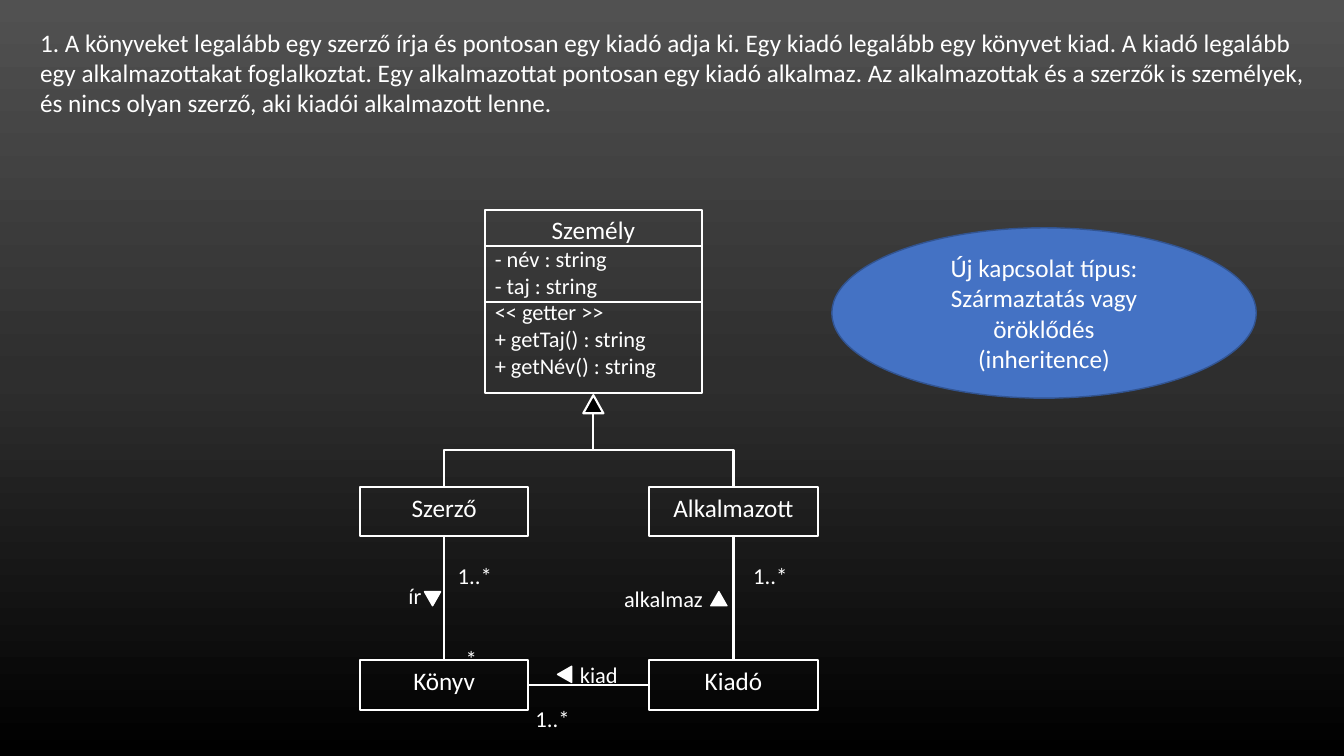
from copy import deepcopy
from dataclasses import dataclass

from pptx import Presentation
from pptx.dml.color import RGBColor
from pptx.enum.shapes import MSO_CONNECTOR as LinkKind, MSO_SHAPE as Preset
from pptx.enum.text import MSO_ANCHOR as Anchor, MSO_AUTO_SIZE as AutoSize, PP_ALIGN as Align
from pptx.oxml.ns import qn
from pptx.oxml.xmlchemy import OxmlElement
from pptx.util import Inches, Pt


@dataclass(frozen=True)
class Theme:
    font: str = "Calibri"
    ink: str = "FFFFFF"
    hollow: str = "000000"
    accent: str = "4472C4"
    accent_edge: str = "325491"
    backdrop: tuple = ((0, "515151"), (0.5, "2E2E2E"), (1, "000000"))
    body: float = 18
    detail: float = 16
    multiplicity: float = 28
    stroke: float = 1.5
    thin: float = 1


THEME = Theme()
TOP, LEFT, BOTTOM, RIGHT = range(4)


def rgb(color):
    return RGBColor.from_string(color)


def write(frame, lines, size, align=Align.CENTER, anchor=Anchor.TOP, baseline=None):
    frame.text = lines[0]
    for line in lines[1:]:
        frame.add_paragraph().text = line
    frame.vertical_anchor = anchor
    for paragraph in frame.paragraphs:
        paragraph.alignment = align
        for run in paragraph.runs:
            run.font.name = THEME.font
            run.font.size = Pt(size)
            run.font.color.rgb = rgb(THEME.ink)
            if baseline:
                run.font._element.set("baseline", str(baseline))


def add_label(slide, box, lines, size, align=Align.CENTER, wrap=True, baseline=None):
    label = slide.shapes.add_textbox(*map(Inches, box))
    write(label.text_frame, lines, size, align, baseline=baseline)
    label.text_frame.word_wrap = wrap
    label.text_frame.auto_size = AutoSize.SHAPE_TO_FIT_TEXT


def add_figure(slide, preset, box, fill=None, edge=THEME.ink, weight=THEME.stroke):
    figure = slide.shapes.add_shape(preset, *map(Inches, box))
    figure.shadow.inherit = False
    if fill:
        figure.fill.solid()
        figure.fill.fore_color.rgb = rgb(fill)
    else:
        figure.fill.background()
    figure.line.color.rgb = rgb(edge)
    figure.line.width = Pt(weight)
    return figure


def add_class(slide, box, name):
    frame = add_figure(slide, Preset.RECTANGLE, box)
    write(frame.text_frame, [name], THEME.body)
    return frame


def add_link(slide, kind, start, end):
    link = slide.shapes.add_connector(kind, *map(Inches, (*start, *end)))
    link.line.color.rgb = rgb(THEME.ink)
    link.line.width = Pt(THEME.stroke)
    link._element.spPr.append(OxmlElement("a:effectLst"))
    return link


def add_association(slide, source, source_side, target, target_side):
    link = add_link(slide, LinkKind.STRAIGHT, (0, 0), (1, 1))
    link.begin_connect(source, source_side)
    link.end_connect(target, target_side)


def add_inheritance(slide, child, parent):
    (x1, y1), (x2, y2) = child, parent
    cx, cy = (x1 + x2) / 2, (y1 + y2) / 2
    dx, dy = (x1 - x2) / 2, (y1 - y2) / 2
    link = add_link(slide, LinkKind.ELBOW, (cx + dy, cy - dx), (cx - dy, cy + dx))
    link._element.spPr.find(qn("a:xfrm")).set("rot", "5400000")


def paint_backdrop(slide):
    fill = slide.background.fill
    fill.gradient()
    fill.gradient_angle = 270
    stops = slide.element.find(".//" + qn("a:gsLst"))
    stops.insert(1, deepcopy(stops[0]))
    for stop, (position, color) in zip(fill.gradient_stops, THEME.backdrop):
        stop.position = position
        stop.color.rgb = rgb(color)


def add_person(slide, box):
    left, top, width, height = box
    add_class(slide, box, "Személy")
    add_figure(slide, Preset.RECTANGLE, (left, top + 0.36, width, 0.56))
    members = ["- név : string", "- taj : string", "<< getter >>",
               "+ getTaj() : string", "+ getNév() : string"]
    add_label(slide, (left, top + 0.3, 1.87, 1.45), members, THEME.detail, Align.LEFT, wrap=False)
    add_figure(slide, Preset.ISOSCELES_TRIANGLE,
               (left + width / 2 - 0.1, top + height + 0.02, 0.2, 0.18), THEME.hollow)
    return left + width / 2, top + height + 0.2


def add_relations(slide, box, parent):
    left, top, width, height = box
    class_w, class_h = 1.67, 0.49
    names = (("Szerző", "Alkalmazott"), ("Könyv", "Kiadó"))
    classes = {}
    for row, pair in enumerate(names):
        for column, name in enumerate(pair):
            x = left + column * (width - class_w)
            y = top + row * (height - class_h)
            classes[name] = add_class(slide, (x, y, class_w, class_h), name)
            if row == 0:
                add_inheritance(slide, (x + class_w / 2, y), parent)

    for source, source_side, target, target_side in (
        ("Kiadó", LEFT, "Könyv", RIGHT),
        ("Könyv", TOP, "Szerző", BOTTOM),
        ("Kiadó", TOP, "Alkalmazott", BOTTOM),
    ):
        add_association(slide, classes[source], source_side, classes[target], target_side)

    for verb, x, y, verb_w, arrow_x, arrow_y, turn in (
        ("ír", 0.32, 0.9, 0.45, 0.64, 1.04, 180),
        ("alkalmaz", 2.45, 0.93, 1.12, 3.48, 1.04, 0),
        ("kiad", 1.89, 1.68, 0.96, 1.95, 1.79, 270),
    ):
        arrow = add_figure(slide, Preset.ISOSCELES_TRIANGLE,
                           (left + arrow_x, top + arrow_y, 0.16, 0.14), THEME.ink, weight=THEME.thin)
        arrow.rotation = turn
        add_label(slide, (left + x, top + y, verb_w, 0.37), [verb], THEME.detail)

    for count, x, y, count_w in (
        ("1..*", 0.84, 0.49, 0.6),
        ("1..*", 3.77, 0.49, 0.6),
        ("1..*", 1.61, 1.91, 0.6),
        ("*", 0.94, 1.31, 0.33),
    ):
        add_label(slide, (left + x, top + y, count_w, 0.42), [count],
                  THEME.multiplicity, wrap=False, baseline=-10000)


def add_callout(slide, box):
    callout = add_figure(slide, Preset.OVAL, box, THEME.accent, THEME.accent_edge, THEME.thin)
    write(callout.text_frame,
          ["Új kapcsolat típus:", "Származtatás vagy öröklődés\v(inheritence)"],
          THEME.body, anchor=Anchor.MIDDLE)


def add_task(slide, box):
    add_label(slide, box, [
        "1. A könyveket legalább egy szerző írja és pontosan egy kiadó adja ki. "
        "Egy kiadó legalább egy könyvet kiad. A kiadó legalább",
        "egy alkalmazottakat foglalkoztat. Egy alkalmazottat pontosan egy kiadó alkalmaz. "
        "Az alkalmazottak és a szerzők is személyek,",
        "és nincs olyan szerző, aki kiadói alkalmazott lenne.",
    ], THEME.body, Align.LEFT, wrap=False)


def main():
    deck = Presentation()
    deck.slide_width, deck.slide_height = Inches(13.33), Inches(7.5)
    slide = deck.slides.add_slide(deck.slide_layouts[6])
    paint_backdrop(slide)
    add_task(slide, (0.3, 0.22, 12.94, 1.01))
    parent = add_person(slide, (4.81, 2.08, 2.15, 1.82))
    add_relations(slide, (3.57, 4.83, 4.54, 2.21), parent)
    add_callout(slide, (8.25, 2.26, 4.21, 1.69))
    deck.save("out.pptx")


if __name__ == "__main__":
    main()
